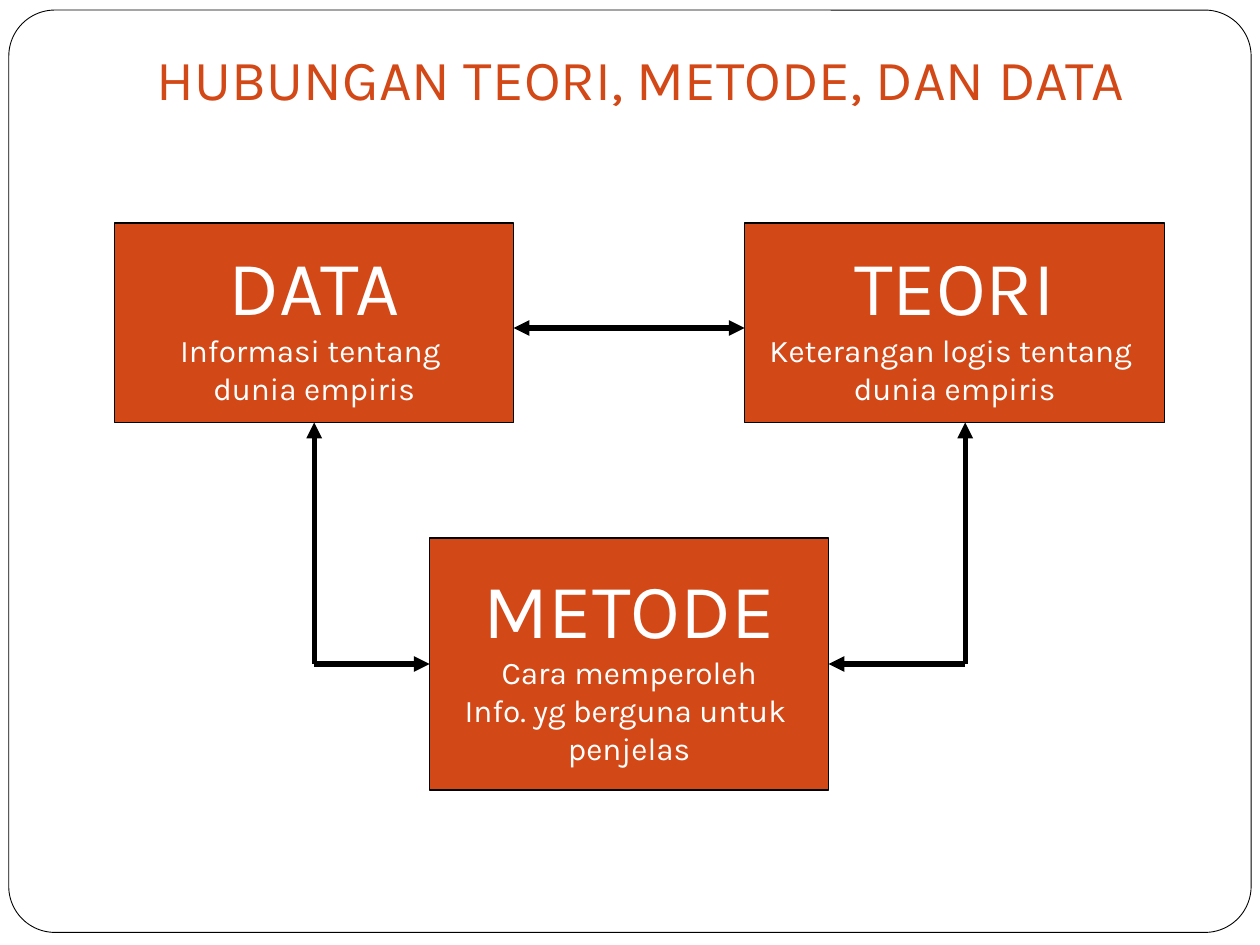
from dataclasses import dataclass
from typing import Any

from lxml.etree import SubElement as Sub
from pptx import Presentation as Deck
from pptx.dml.color import RGBColor as Color
from pptx.enum.shapes import MSO_CONNECTOR as Wire, MSO_SHAPE as Form
from pptx.enum.text import MSO_ANCHOR as Anchor, MSO_AUTO_SIZE as Fit, PP_ALIGN as Align
from pptx.oxml.ns import qn
from pptx.util import Inches, Pt

RUST = Color(0xD3, 0x48, 0x17)
WHITE = Color(0xFF, 0xFF, 0xFF)
BLACK = Color(0, 0, 0)
FACE = "Karla"
LEFT, TOP, CELL = 0.91, 1.77, 1 / 6


@dataclass
class Box:
    col: float
    row: float
    wide: float
    high: float
    head: str
    body: list[str]


@dataclass
class Arrow:
    start: tuple[float, float]
    end: tuple[float, float]
    both: bool = False


BOXES = [
    Box(0, 0, 19, 9.5, "DATA", ["Informasi tentang ", "dunia empiris"]),
    Box(30, 0, 20, 9.5, "TEORI", ["Keterangan logis tentang ", "dunia empiris"]),
    Box(15, 15, 19, 12, "METODE",
        ["Cara memperoleh", "Info. yg berguna untuk ", "penjelas"]),
]
ARROWS = [
    Arrow((19, 5), (30, 5), True),
    Arrow((40.5, 21), (34, 21)),
    Arrow((40.5, 21), (40.5, 9.5)),
    Arrow((9.5, 21), (9.5, 9.5)),
    Arrow((9.5, 21), (15, 21)),
]


def style(item: Any, form: dict[str, Any]) -> None:
    for key, value in form.items():
        setattr(item, key, value)


def place(col: float, row: float) -> tuple[int, int]:
    return Inches(LEFT + col * CELL), Inches(TOP + row * CELL)


def write(par: Any, text: str, size: float, color: Color) -> None:
    par.alignment = Align.CENTER
    run = par.add_run()
    run.text = text
    style(run.font, {"name": FACE, "size": Pt(size), "bold": False})
    run.font.color.rgb = color


def panel(slide: Any, form: Form, area: tuple, fill: Color, width: float) -> Any:
    shape = slide.shapes.add_shape(form, *area)
    shape.shadow.inherit = False
    shape.fill.solid()
    shape.fill.fore_color.rgb = fill
    shape.line.color.rgb = BLACK
    shape.line.width = Pt(width)
    return shape


def draw_box(slide: Any, box: Box) -> None:
    size = Inches(box.wide * CELL), Inches(box.high * CELL)
    shape = panel(slide, Form.RECTANGLE, place(box.col, box.row) + size, RUST, 0.75)
    frame = shape.text_frame
    style(frame, {"word_wrap": False, "vertical_anchor": Anchor.MIDDLE})
    write(frame.paragraphs[0], box.head, 44, WHITE)
    for text in box.body:
        write(frame.add_paragraph(), text, 18, WHITE)


def draw_arrow(slide: Any, arrow: Arrow) -> None:
    link = slide.shapes.add_connector(
        Wire.STRAIGHT, *place(*arrow.start), *place(*arrow.end))
    link.line.color.rgb = BLACK
    link.line.width = Pt(3)
    line = link.line._get_or_add_ln()
    for tag in ("a:headEnd", "a:tailEnd")[0 if arrow.both else 1:]:
        Sub(line, qn(tag), type="triangle")
    Sub(link._element.spPr, qn("a:effectLst"))


def draw_title(slide: Any, text: str) -> None:
    title = slide.shapes.title
    style(title, {"left": Inches(0.75), "top": Inches(0.36),
                  "width": Inches(8.67), "height": Inches(0.63)})
    frame = title.text_frame
    style(frame, {"word_wrap": True, "auto_size": Fit.NONE,
                  "vertical_anchor": Anchor.BOTTOM, "margin_bottom": Inches(0.1)})
    write(frame.paragraphs[0], text, 32.4, RUST)


def draw_frame(slide: Any) -> None:
    area = tuple(Inches(n) for n in (0.07, 0.08, 9.86, 7.32))
    shape = panel(slide, Form.ROUNDED_RECTANGLE, area, WHITE, 0.5)
    shape.adjustments[0] = 0.05
    slide.shapes._spTree.insert(2, shape._element)


def main() -> None:
    deck = Deck()
    style(deck, {"slide_width": Inches(10), "slide_height": Inches(7.5)})
    slide = deck.slides.add_slide(deck.slide_layouts[5])
    draw_frame(slide)
    draw_title(slide, "HUBUNGAN TEORI, METODE, DAN DATA")
    for box in BOXES:
        draw_box(slide, box)
    for arrow in ARROWS:
        draw_arrow(slide, arrow)
    deck.save("out.pptx")


if __name__ == "__main__":
    main()
